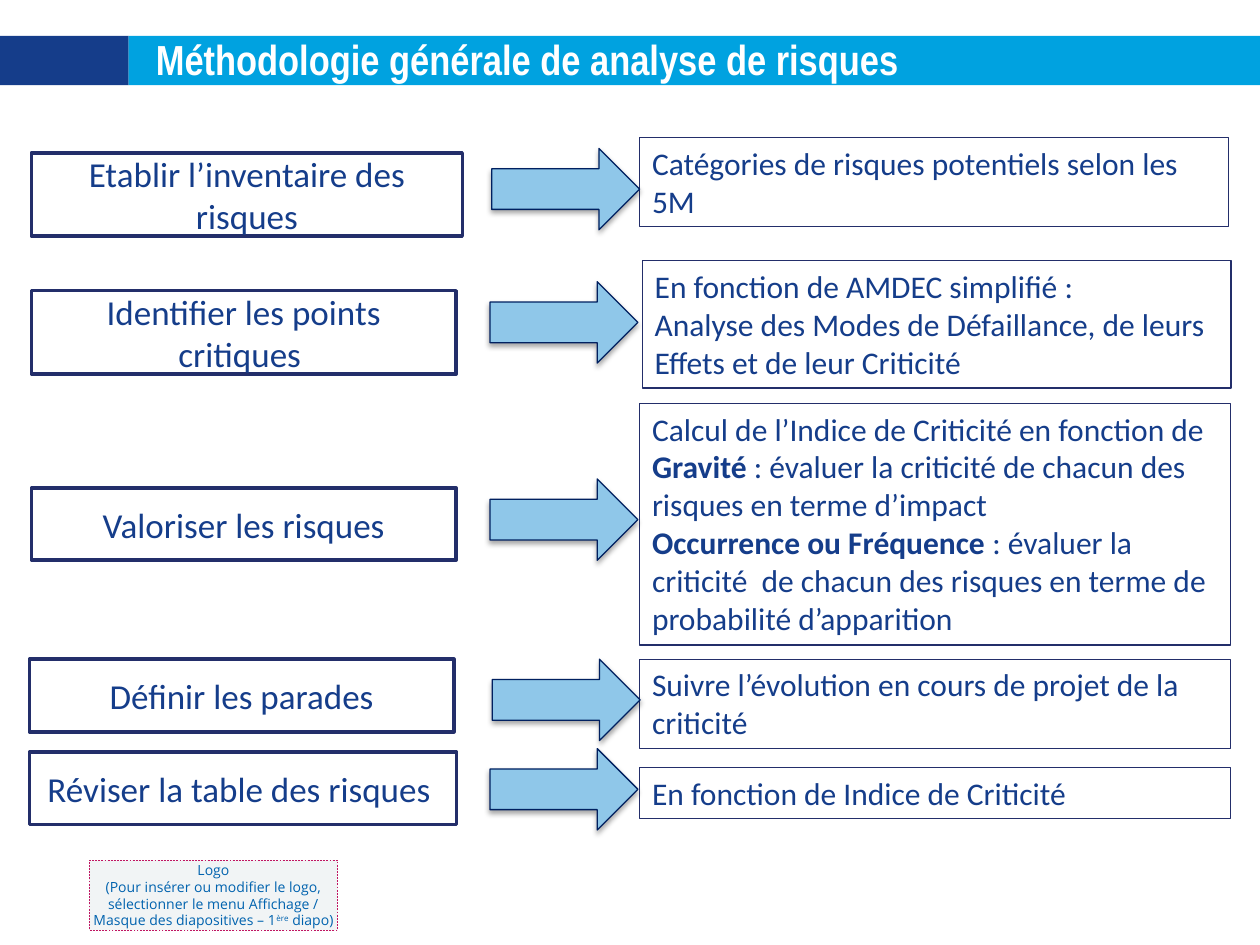
import pptx
import pptx.dml.color
import pptx.enum.dml
import pptx.enum.shapes
import pptx.enum.text
import pptx.util
from lxml import etree

Pt = pptx.util.Pt
SHAPE = pptx.enum.shapes.MSO_SHAPE
ANCHOR = pptx.enum.text.MSO_ANCHOR
ALIGN = pptx.enum.text.PP_ALIGN
DRAWING_NS = "http://schemas.openxmlformats.org/drawingml/2006/main"


def colour(hex_code):
    return pptx.dml.color.RGBColor.from_string(hex_code)


class RiskSlide:
    NAVY, SKY, WHITE = "153D8A", "00A2E0", "FFFFFF"
    BORDER = "232E6A"
    ARROW_FILL, ARROW_LINE = "8FC7E9", "002060"
    BODY_FONT = "Calibri"

    def __init__(self, slide):
        self.slide = slide

    def box(self, left, top, width, height, fill=None, line=None, weight=0.75,
            kind=SHAPE.RECTANGLE):
        shape = self.slide.shapes.add_shape(
            kind, Pt(left), Pt(top), Pt(width), Pt(height))
        shape.shadow.inherit = False
        if fill:
            shape.fill.solid()
            shape.fill.fore_color.rgb = colour(fill)
        else:
            shape.fill.background()
        if line:
            shape.line.color.rgb = colour(line)
            shape.line.width = Pt(weight)
        else:
            shape.line.fill.background()
        return shape

    def set_text(self, shape, paragraphs, size, ink=NAVY, font=BODY_FONT,
                 align=ALIGN.LEFT, anchor=ANCHOR.TOP):
        """Each paragraph is a string or a list of (text, mark) pairs."""
        frame = shape.text_frame
        frame.word_wrap = True
        frame.vertical_anchor = anchor
        for index, content in enumerate(paragraphs):
            paragraph = frame.add_paragraph() if index else frame.paragraphs[0]
            paragraph.alignment = align
            paragraph.font.name = font
            paragraph.font.size = Pt(size)
            paragraph.font.color.rgb = colour(ink)
            pairs = [(content, None)] if isinstance(content, str) else content
            for text, mark in pairs:
                run = paragraph.add_run()
                run.text = text
                if mark == "bold":
                    run.font.bold = True
                elif mark == "superscript":
                    run._r.get_or_add_rPr().set("baseline", "30000")
        return frame

    def title(self, text, left, top, width, height):
        heading = self.slide.shapes.add_textbox(
            Pt(left), Pt(top), Pt(width), Pt(height))
        self.set_text(heading, [[(text, "bold")]], 24, self.WHITE, "Arial Narrow")

    def step(self, text, *place):
        shape = self.box(*place, line=self.BORDER, weight=2)
        self.set_text(shape, [text], 20, align=ALIGN.CENTER, anchor=ANCHOR.MIDDLE)

    def detail(self, paragraphs, *place):
        shape = self.box(*place, line=self.BORDER)
        self.set_text(shape, paragraphs, 18)

    def arrow(self, left, top):
        shape = self.box(left, top, 84.5, 46.5, self.ARROW_FILL,
                         self.ARROW_LINE, kind=SHAPE.RIGHT_ARROW)
        effects = shape._element.spPr.find(f"{{{DRAWING_NS}}}effectLst")
        shadow = etree.SubElement(
            effects, f"{{{DRAWING_NS}}}outerShdw", blurRad=str(Pt(3.1)),
            dist=str(Pt(1.8)), dir="5400000", rotWithShape="0")
        black = etree.SubElement(shadow, f"{{{DRAWING_NS}}}srgbClr", val="000000")
        etree.SubElement(black, f"{{{DRAWING_NS}}}alpha", val="35000")

    def logo_note(self, paragraphs, *place):
        shape = self.box(*place, fill="F1F4F5", line="C01662", weight=0.25)
        shape.line.dash_style = pptx.enum.dml.MSO_LINE.DASH
        frame = self.set_text(shape, paragraphs, 8, "0062AE", "Open Sans",
                              ALIGN.CENTER, ANCHOR.MIDDLE)
        frame.margin_left = frame.margin_right = 0
        frame.margin_top = frame.margin_bottom = Pt(2.9)


# One row per stage: step, its place, arrow corner, details, their place
STAGES = [
    ("Etablir l’inventaire des risques", (18, 87.3, 246.2, 47.7), (281, 84.8),
     ["Catégories de risques potentiels selon les 5M"],
     (365.5, 78.6, 336.4, 50.9)),
    ("Identifier les points critiques ", (18, 166.1, 242.6, 47.7), (280, 161),
     ["En fonction de AMDEC simplifié :",
      "Analyse des Modes de Défaillance, de leurs Effets et de leur Criticité"],
     (367, 149, 336.4, 72.7)),
    ("Valoriser les risques", (18, 278.8, 242.6, 41.3), (280, 273.7),
     [[("Calcul de l’Indice de Criticité en fonction de ", None),
       ("Gravité", "bold"),
       (" : évaluer la criticité de chacun des risques en terme d’impact", None)],
      [("Occurrence ou Fréquence ", "bold"),
       (": évaluer la criticité  de chacun des risques en terme de "
        "probabilité d’apparition", None)]],
     (365.5, 230.6, 337.7, 138.1)),
    ("Définir les parades", (16.8, 376.7, 242.6, 41.5), (281.3, 376.7),
     ["Suivre l’évolution en cours de projet de la criticité"],
     (365.5, 376.7, 337.7, 50.9)),
    ("Réviser la table des risques ", (16.8, 429.8, 244.1, 41.3), (280, 427.8),
     ["En fonction de Indice de Criticité"],
     (365.5, 438.6, 337.7, 29.1)),
]


def main():
    deck = pptx.Presentation()
    deck.slide_width, deck.slide_height = Pt(720), Pt(540)
    page = RiskSlide(deck.slides.add_slide(deck.slide_layouts[6]))

    # Title band
    page.box(0, 20.5, 73.6, 28.2, fill=page.NAVY)
    page.box(73.6, 20.5, 646.4, 28.2, fill=page.SKY)
    page.title("Méthodologie générale de analyse de risques", 82, 15.4, 582, 36)

    # Logo area
    page.logo_note(
        ["Logo",
         [("(Pour insérer ou modifier le logo, sélectionner le menu Affichage / "
           "Masque des diapositives – 1", None),
          ("ère", "superscript"), (" diapo)", None)]],
        51, 491.6, 142, 39.9)

    # Stages of the method
    for step, step_place, arrow_corner, details, details_place in STAGES:
        page.step(step, *step_place)
        page.detail(details, *details_place)
        page.arrow(*arrow_corner)

    deck.save("out.pptx")


if __name__ == "__main__":
    main()
